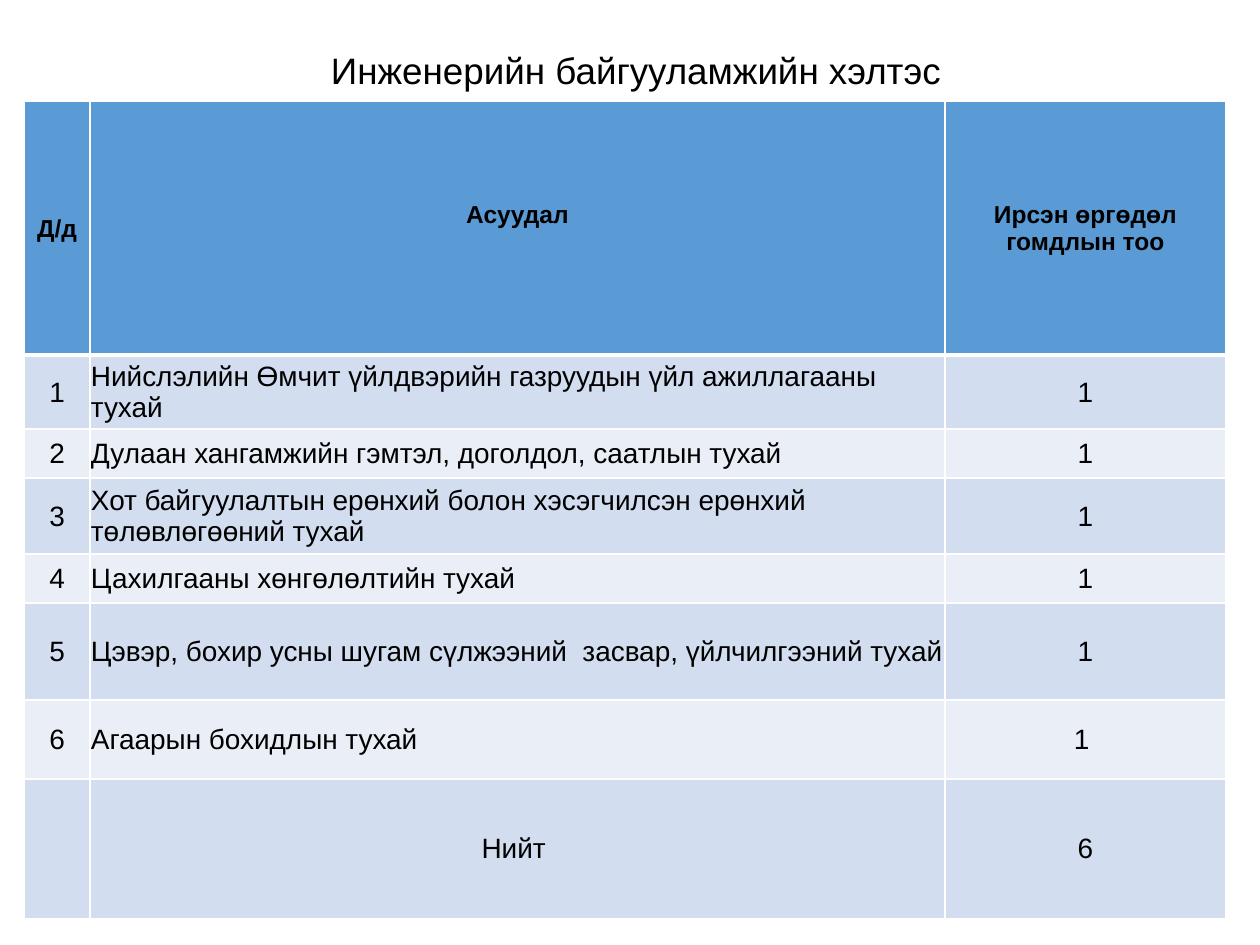
from typing import NamedTuple

from lxml.etree import SubElement as Sub
from pptx import Presentation
from pptx.dml.color import RGBColor
from pptx.enum.text import MSO_ANCHOR as Anchor, PP_ALIGN as Align
from pptx.oxml.ns import qn
from pptx.util import Emu, Pt

BLACK = RGBColor(0x00, 0x00, 0x00)
WHITE = RGBColor(0xFF, 0xFF, 0xFF)
BLUE = RGBColor(0x5B, 0x9B, 0xD5)
BANDS = RGBColor(0xD2, 0xDE, 0xEF), RGBColor(0xEA, 0xEF, 0xF7)
FONT = "Arial"
COLS = 66, 855, 281
LIFT = 28  # extra space below the middle heading


class Row(NamedTuple):
    high: int
    num: str
    topic: str
    count: str


HEAD = Row(254, "Д/д", "Асуудал", "Ирсэн өргөдөл гомдлын тоо")
ITEMS = [
    Row(74, "1", "Нийслэлийн Өмчит үйлдвэрийн газруудын үйл ажиллагааны тухай", "1"),
    Row(49, "2", "Дулаан хангамжийн гэмтэл, доголдол, саатлын тухай", "1"),
    Row(76, "3", "Хот байгуулалтын ерөнхий болон хэсэгчилсэн ерөнхий төлөвлөгөөний тухай", "1"),
    Row(49, "4", "Цахилгааны хөнгөлөлтийн тухай", "1"),
    Row(97, "5", "Цэвэр, бохир усны шугам сүлжээний  засвар, үйлчилгээний тухай", "1"),
    Row(79, "6", "Агаарын бохидлын тухай", "1 "),
]
TOTAL = Row(140, "", "Нийт ", "6")


def px(n: int) -> Emu:
    return Emu(round(n * 914400 / 126))


def write(frame, text: str, *, size: int, bold: bool = False,
          align=Align.CENTER, lead: float = 1.0) -> None:
    frame.word_wrap = True
    para = frame.paragraphs[0]
    para.alignment, para.line_spacing = align, lead
    run = para.add_run()
    run.text = text
    font = run.font
    font.name, font.size, font.bold = FONT, Pt(size), bold
    font.color.rgb = BLACK


def edge(cell, base: int) -> None:
    """Draw white cell borders, the lower one base points wide."""
    props = cell._tc.get_or_add_tcPr()
    for i, (side, wide) in enumerate(zip("LRTB", (1, 1, 1, base))):
        line = Sub(props, qn(f"a:ln{side}"), w=str(Pt(wide)))
        Sub(Sub(line, qn("a:solidFill")), qn("a:srgbClr"), val=str(WHITE))
        props.insert(i, line)


def fill_row(table, i: int, row: Row, tint: RGBColor) -> None:
    head = row is HEAD
    table.rows[i].height = px(row.high)
    for j, text in enumerate(row[1:]):
        cell = table.cell(i, j)
        cell.fill.solid()
        cell.fill.fore_color.rgb = tint
        cell.vertical_anchor = Anchor.MIDDLE
        cell.margin_left = cell.margin_right = cell.margin_top = px(1)
        cell.margin_bottom = px(LIFT if head and j == 1 else 0)
        edge(cell, 3 if head else 1)
        if text:
            left = j == 1 and row in ITEMS
            write(cell.text_frame, text, size=14 if head else 16, bold=head,
                  align=Align.LEFT if left else Align.CENTER)


def add_title(slide, text: str) -> None:
    title = slide.shapes.title
    title.left, title.top, title.width, title.height = map(px, (18, 24, 1206, 98))
    frame = title.text_frame
    frame.vertical_anchor = Anchor.MIDDLE
    frame.margin_left, frame.margin_right = px(43), px(13)
    write(frame, text, size=21, lead=0.9)


def add_grid(slide) -> None:
    rows = [HEAD, *ITEMS, TOTAL]
    size = sum(COLS), sum(row.high for row in rows)
    table = slide.shapes.add_table(len(rows), len(COLS),
                                   *map(px, (24, 101, *size))).table
    for col, wide in zip(table.columns, COLS):
        col.width = px(wide)
    for i, row in enumerate(rows):
        fill_row(table, i, row, BANDS[(i - 1) % 2] if i else BLUE)


def main() -> None:
    deck = Presentation()
    deck.slide_width, deck.slide_height = px(1260), px(945)
    slide = deck.slides.add_slide(deck.slide_layouts[5])
    add_title(slide, "Инженерийн байгууламжийн хэлтэс")
    add_grid(slide)
    deck.save("out.pptx")


if __name__ == "__main__":
    main()
